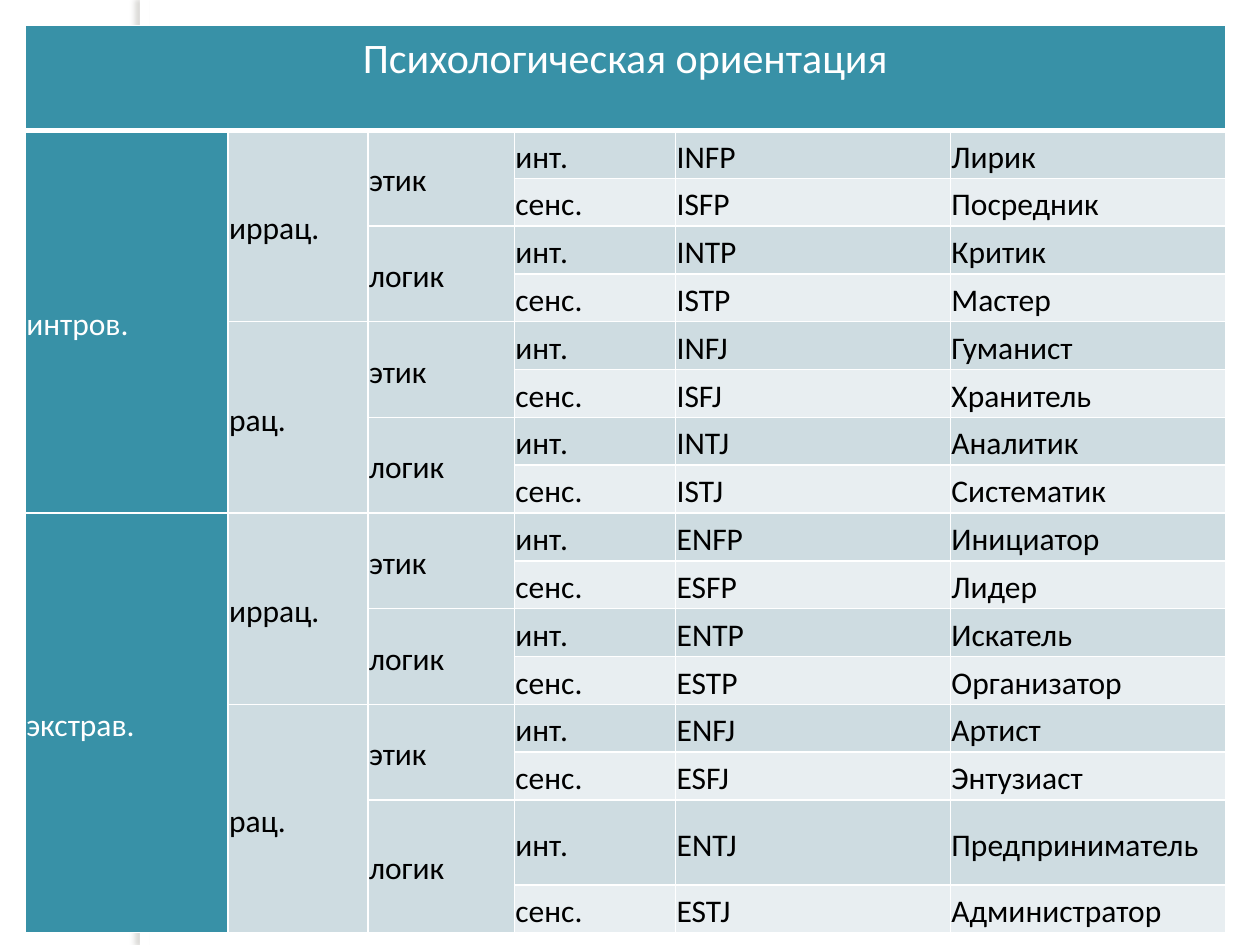
from dataclasses import dataclass
from itertools import product

from lxml import etree
from pptx import Presentation
from pptx.dml.color import RGBColor
from pptx.enum.shapes import MSO_SHAPE as Shape
from pptx.enum.text import MSO_ANCHOR as Anchor, PP_ALIGN as Align
from pptx.oxml.ns import qn
from pptx.util import Cm, Pt


@dataclass(frozen=True)
class Theme:
    font: str = "Calibri"
    title_size: int = 24
    body_size: int = 18
    white: str = "FFFFFF"
    black: str = "000000"
    teal: str = "3891A7"
    band_dark: str = "CEDCE1"
    band_light: str = "E8EEF1"
    shadow: str = "736F63"


theme = Theme()


def write_cell(cell, text, *, fill, color=theme.black, size=theme.body_size,
               align=Align.LEFT, anchor=Anchor.MIDDLE):
    cell.fill.solid()
    cell.fill.fore_color.rgb = RGBColor.from_string(fill)
    cell.vertical_anchor = anchor
    paragraph = cell.text_frame.paragraphs[0]
    paragraph.alignment = align
    paragraph.line_spacing = 1.15
    run = paragraph.add_run()
    run.text = text
    run.font.name = theme.font
    run.font.size = Pt(size)
    run.font.color.rgb = RGBColor.from_string(color)


def set_borders(cell, bottom_width=1):
    properties = cell._tc.get_or_add_tcPr()
    widths = {"a:lnL": 1, "a:lnR": 1, "a:lnT": 1, "a:lnB": bottom_width}
    for position, (tag, width) in enumerate(widths.items()):
        line = etree.Element(qn(tag), w=str(Pt(width)))
        solid = etree.SubElement(line, qn("a:solidFill"))
        etree.SubElement(solid, qn("a:srgbClr"), val=theme.white)
        properties.insert(position, line)


presentation = Presentation()
presentation.slide_width = Cm(25.4)
presentation.slide_height = Cm(19.05)
slide = presentation.slides.add_slide(presentation.slide_layouts[6])

# Vertical strip with a soft shadow to its left
strip = slide.shapes.add_shape(Shape.RECTANGLE, Cm(2.82), 0, Cm(0.2), Cm(19.05))
strip.fill.solid()
strip.fill.fore_color.rgb = RGBColor.from_string(theme.white)
strip.line.fill.background()
strip.shadow.inherit = False
effects = strip._element.spPr.find(qn("a:effectLst"))
shadow = etree.SubElement(effects, qn("a:outerShdw"), blurRad=str(Pt(3)),
                          dist=str(Pt(3)), dir="10800000", rotWithShape="0")
shadow_color = etree.SubElement(shadow, qn("a:srgbClr"), val=theme.shadow)
etree.SubElement(shadow_color, qn("a:alpha"), val="25000")

# Table grid
column_widths = [4.09, 2.82, 2.95, 3.25, 5.54, 5.54]
row_heights = [2.12] + [14.47 / 15] * 16
row_heights[15] = 1.71
frame = slide.shapes.add_table(
    len(row_heights), len(column_widths), Cm(0.51), Cm(0.51),
    Cm(sum(column_widths)), Cm(sum(row_heights)))
table = frame.table
for column, width in zip(table.columns, column_widths):
    column.width = Cm(width)
for row, height in zip(table.rows, row_heights):
    row.height = Cm(height)
for row_index, row in enumerate(table.rows):
    for cell in row.cells:
        cell.margin_left = cell.margin_right = Cm(0.02)
        cell.margin_top = cell.margin_bottom = Cm(0.02)
        set_borders(cell, bottom_width=3 if row_index == 0 else 1)

# Header
table.cell(0, 0).merge(table.cell(0, 5))
write_cell(table.cell(0, 0), "Психологическая ориентация", fill=theme.teal,
           color=theme.white, size=theme.title_size, align=Align.CENTER,
           anchor=Anchor.TOP)

# Merged group columns: each level halves the span of the one before
groups = [
    (8, ["интров.", "экстрав."], theme.teal, theme.white),
    (4, ["иррац.", "рац."], theme.band_dark, theme.black),
    (2, ["этик", "логик"], theme.band_dark, theme.black),
]
for column_index, (span, labels, fill, color) in enumerate(groups):
    for group_index, first_row in enumerate(range(1, 17, span)):
        cell = table.cell(first_row, column_index)
        cell.merge(table.cell(first_row + span - 1, column_index))
        write_cell(cell, labels[group_index % 2], fill=fill, color=color)

# Sixteen types: the code letters follow the order of the groups
type_names = [
    "Лирик", "Посредник", "Критик", "Мастер",
    "Гуманист", "Хранитель", "Аналитик", "Систематик",
    "Инициатор", "Лидер", "Искатель", "Организатор",
    "Артист", "Энтузиаст", "Предприниматель", "Администратор",
]
type_letters = product("IE", "PJ", "FT", "NS")
for row_index, (letters, name) in enumerate(zip(type_letters, type_names), start=1):
    attitude, order, judgement, perception = letters
    intuitive = perception == "N"
    code = attitude + perception + judgement + order
    values = ["инт." if intuitive else "сенс.", code, name]
    band = theme.band_dark if intuitive else theme.band_light
    for column_index, value in enumerate(values, start=3):
        write_cell(table.cell(row_index, column_index), value, fill=band)

presentation.save("out.pptx")
